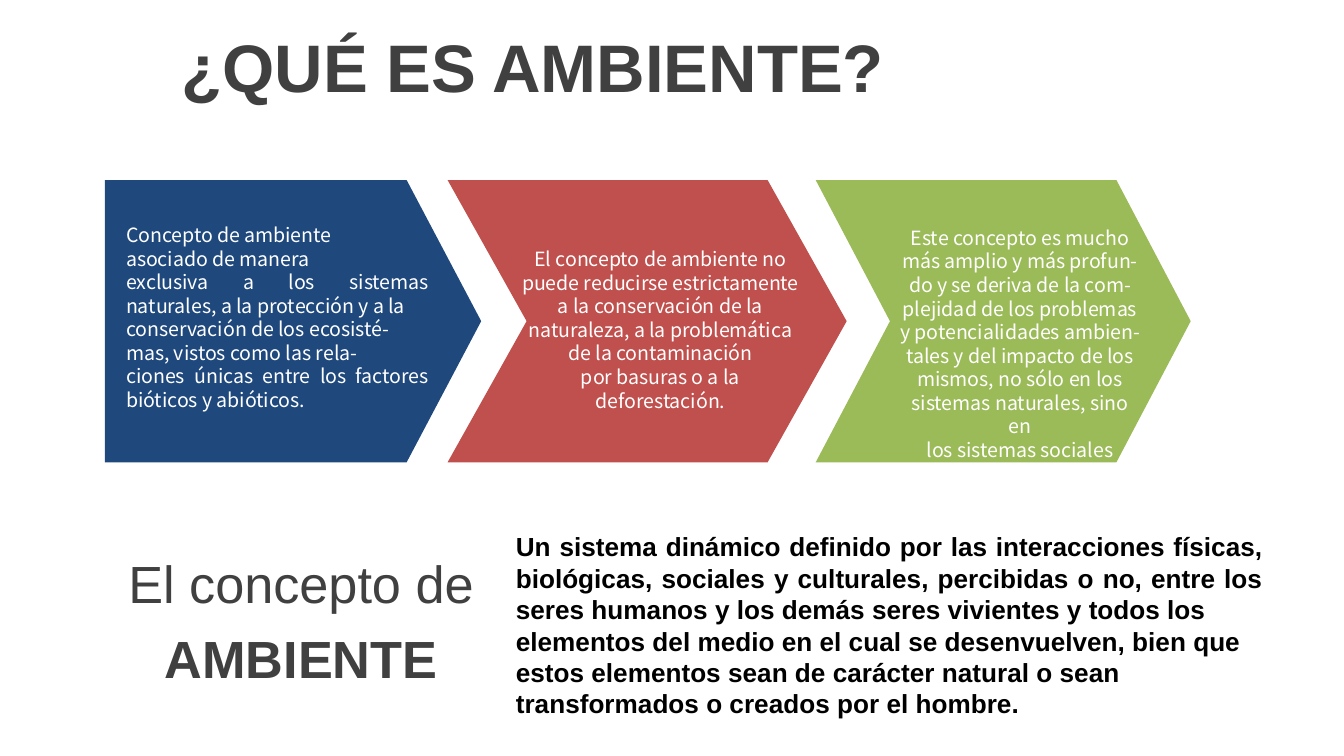
from dataclasses import dataclass

import pptx
import pptx.dml.color
import pptx.enum.text
import pptx.util

Pt = pptx.util.Pt
Align = pptx.enum.text.PP_ALIGN
Anchor = pptx.enum.text.MSO_ANCHOR
AutoSize = pptx.enum.text.MSO_AUTO_SIZE


@dataclass(frozen=True)
class Theme:
    heading_font: str = "Arial"
    stage_font: str = "Noto Sans CJK KR"
    dark: str = "404040"
    black: str = "000000"
    white: str = "FFFFFF"
    blue: str = "1F497D"
    red: str = "C0504D"
    green: str = "9BBB59"
    title_size: float = 36
    concept_size: float = 28
    definition_size: float = 14
    stage_size: float = 10.5
    stage_leading: float = 12.6


def rgb(code):
    return pptx.dml.color.RGBColor.from_string(code)


def write(paragraph, text, *, font, size, color, bold=False,
          align=Align.LEFT, before=0, leading=None):
    paragraph.alignment = align
    paragraph.space_before = Pt(before)
    if leading:
        paragraph.line_spacing = Pt(leading)
    run = paragraph.add_run()
    run.text = text
    run.font.name = font
    run.font.size = Pt(size)
    run.font.bold = bold
    run.font.color.rgb = rgb(color)


class SlideBuilder:
    def __init__(self, slide, theme):
        self.slide = slide
        self.theme = theme

    def title(self, text, left, top, width, height, indent):
        heading = self.slide.shapes.title
        heading.left, heading.top = Pt(left), Pt(top)
        heading.width, heading.height = Pt(width), Pt(height)
        frame = heading.text_frame
        frame.auto_size = AutoSize.NONE
        frame.vertical_anchor = Anchor.MIDDLE
        frame.margin_left = Pt(indent)
        write(frame.paragraphs[0], text, font=self.theme.heading_font,
              size=self.theme.title_size, color=self.theme.dark, bold=True)

    def arrow(self, left, top, width, height, color, notched):
        tip = width * 0.198
        right, middle, bottom = left + width, top + height / 2, top + height
        corners = [(right - tip, top), (right, middle), (right - tip, bottom), (left, bottom)]
        if notched:
            corners.append((left + tip, middle))
        outline = self.slide.shapes.build_freeform(Pt(left), Pt(top))
        outline.add_line_segments([(Pt(x), Pt(y)) for x, y in corners], close=True)
        shape = outline.convert_to_shape()
        shape.shadow.inherit = False
        shape.fill.solid()
        shape.fill.fore_color.rgb = rgb(color)
        shape.line.fill.background()

    def text(self, box, paragraphs, anchor=Anchor.TOP, auto_size=AutoSize.SHAPE_TO_FIT_TEXT,
             **common):
        frame = self.slide.shapes.add_textbox(*map(Pt, box)).text_frame
        frame.word_wrap = True
        frame.auto_size = auto_size
        frame.vertical_anchor = anchor
        for index, (words, extra) in enumerate(paragraphs):
            paragraph = frame.add_paragraph() if index else frame.paragraphs[0]
            write(paragraph, words, **{**common, **extra})


STAGES = [
    (56.2, 201.6, "blue", (60.5, 115.9, 176.4, 108.7), Align.JUSTIFY, [
        "Concepto de ambiente",
        "asociado de manera",
        "exclusiva a los sistemas naturales, a la protección y a la",
        "conservación de los ecosisté-",
        "mas, vistos como las rela-",
        "ciones únicas entre los factores bióticos y abióticos.",
    ]),
    (239.8, 213.8, "red", (271.4, 128.9, 164.9, 96.5), Align.CENTER, [
        "El concepto de ambiente no",
        "puede reducirse estrictamente a la conservación de la",
        "naturaleza, a la problemática",
        "de la contaminación",
        "por basuras o a la",
        "deforestación.",
    ]),
    (437, 200.9, "green", (474.5, 117.4, 144, 121.7), Align.CENTER, [
        "Este concepto es mucho más amplio y más profun-do y se deriva de la "
        "com-plejidad de los problemas y potencialidades ambien-tales y del impacto "
        "de los mismos, no sólo en los sistemas naturales, sino en",
        "los sistemas sociales",
    ]),
]

DEFINITION = [
    "Un sistema dinámico definido por las interacciones físicas, biológicas, sociales y "
    "culturales, percibidas o no, entre los seres humanos y los demás seres vivientes y todos los",
    "elementos del medio en el cual se desenvuelven, bien que",
    "estos elementos sean de carácter natural o sean",
    "transformados o creados por el hombre.",
]


def main():
    theme = Theme()
    deck = pptx.Presentation()
    deck.slide_width, deck.slide_height = Pt(720), Pt(405)
    builder = SlideBuilder(deck.slides.add_slide(deck.slide_layouts[5]), theme)

    builder.title("¿QUÉ ES AMBIENTE?", 0, 0, 720, 70, indent=97.2)

    for index, (left, width, color, box, align, lines) in enumerate(STAGES):
        builder.arrow(left, 96.5, width, 151.2, getattr(theme, color), notched=index > 0)
        builder.text(box, [(line, {}) for line in lines], align=align,
                     font=theme.stage_font, size=theme.stage_size,
                     color=theme.white, leading=theme.stage_leading)

    builder.text((36.7, 289, 249.1, 86.4),
                 [("El concepto de", {}), ("AMBIENTE", {"bold": True, "before": 6.5})],
                 anchor=Anchor.MIDDLE, auto_size=AutoSize.NONE, align=Align.CENTER,
                 font=theme.heading_font, size=theme.concept_size, color=theme.dark)

    builder.text((269.3, 280.8, 414.7, 108.7), [(line, {}) for line in DEFINITION],
                 align=Align.JUSTIFY, font=theme.heading_font,
                 size=theme.definition_size, color=theme.black, bold=True)

    deck.save("out.pptx")


if __name__ == "__main__":
    main()
